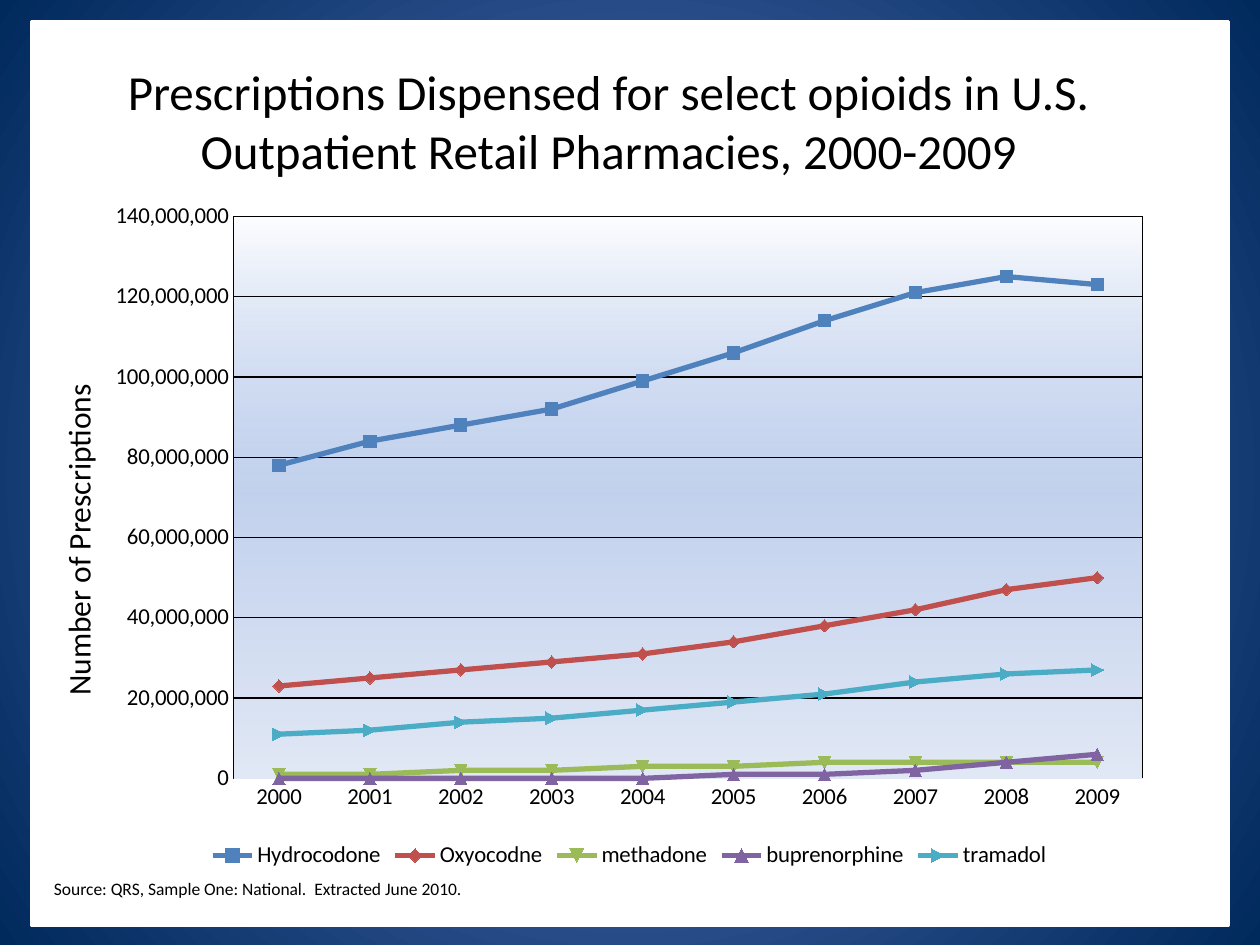
from lxml import etree
from pptx import Presentation
from pptx.chart.data import CategoryChartData
from pptx.dml.color import RGBColor
from pptx.enum.chart import XL_CHART_TYPE, XL_LEGEND_POSITION, XL_TICK_MARK
from pptx.enum.shapes import MSO_SHAPE
from pptx.enum.text import MSO_ANCHOR, PP_ALIGN
from pptx.oxml import parse_xml
from pptx.oxml.ns import nsdecls, qn
from pptx.util import Inches, Pt

LINE_MARKERS = XL_CHART_TYPE.LINE_MARKERS
BOTTOM = XL_LEGEND_POSITION.BOTTOM
NO_TICK = XL_TICK_MARK.NONE
RECTANGLE = MSO_SHAPE.RECTANGLE
MIDDLE, TOP = MSO_ANCHOR.MIDDLE, MSO_ANCHOR.TOP
CENTER, LEFT = PP_ALIGN.CENTER, PP_ALIGN.LEFT

FONT = "Calibri"
COLORS = {
    "glow": "5E7CC5", "navy": "00295C", "panel": "FFFFFF", "ink": "000000",
    "base": "E1E8F5", "Hydrocodone": "4F81BD", "Oxyocodne": "C0504D",
    "methadone": "9BBB59", "buprenorphine": "8064A2", "tramadol": "4BACC6",
}
MILLIONS = {
    "Hydrocodone": [78, 84, 88, 92, 99, 106, 114, 121, 125, 123],
    "Oxyocodne": [23, 25, 27, 29, 31, 34, 38, 42, 47, 50],
    "methadone": [1, 1, 2, 2, 3, 3, 4, 4, 4, 4],
    "buprenorphine": [0, 0, 0, 0, 0, 1, 1, 2, 4, 6],
    "tramadol": [11, 12, 14, 15, 17, 19, 21, 24, 26, 27],
}


def color(name):
    return RGBColor.from_string(COLORS[name])


def add_text(page, text, left, top, width, height, size=10, align=LEFT,
             anchor=TOP, wrap=True, rotation=0):
    box = page.shapes.add_textbox(Inches(left), Inches(top), Inches(width), Inches(height))
    box.rotation = rotation
    frame = box.text_frame
    frame.word_wrap = wrap
    frame.vertical_anchor = anchor
    para = frame.paragraphs[0]
    para.alignment = align
    span = para.add_run()
    span.text = text
    span.font.name = FONT
    span.font.size = Pt(size)
    span.font.color.rgb = color("ink")


deck = Presentation()
deck.slide_width, deck.slide_height = Inches(10), Inches(7.5)
page = deck.slides.add_slide(deck.slide_layouts[6])

# Background: radial gradient
fill = page.background.fill
fill.gradient()
for stop, name in zip(fill.gradient_stops, ("glow", "navy")):
    stop.color.rgb = color(name)
    stop.position = 0 if name == "glow" else 1
gradient = page.element.find(".//" + qn("a:gradFill"))
linear = gradient.find(qn("a:lin"))
radial = parse_xml(
    f'<a:path {nsdecls("a")} path="circle">'
    '<a:fillToRect l="50000" t="50000" r="50000" b="50000"/></a:path>')
gradient.replace(linear, radial)

# White panel
panel = page.shapes.add_shape(RECTANGLE, Inches(0.25), Inches(0.17), Inches(9.5), Inches(7.17))
panel.shadow.inherit = False
panel.fill.solid()
panel.fill.fore_color.rgb = color("panel")
panel.line.color.rgb = color("panel")
panel.line.width = Pt(2)

# Title
add_text(page, "Prescriptions Dispensed for select opioids in U.S. "
         "Outpatient Retail Pharmacies, 2000-2009",
         0.33, 0.33, 9, 1.25, size=28, align=CENTER, anchor=MIDDLE)

# Line chart
data = CategoryChartData(number_format="#,##0")
data.categories = [str(year) for year in range(2000, 2010)]
for name, values in MILLIONS.items():
    data.add_series(name, [value * 1_000_000 for value in values])
chart = page.shapes.add_chart(LINE_MARKERS, Inches(0.75), Inches(1.5),
                              Inches(8.49), Inches(5.44), data).chart
chart.has_title = False
chart.font.name = FONT
chart.font.size = Pt(10)
chart.font.color.rgb = color("ink")
chart.has_legend = True
chart.legend.position = BOTTOM
chart.legend.include_in_layout = False
chart.plots[0].vary_by_categories = False

for series in chart.plots[0].series:
    series.smooth = False
    series.format.line.width = Pt(3)
    series.format.line.color.rgb = color(series.name)
    series.marker.size = 7
    series.marker.format.fill.solid()
    series.marker.format.fill.fore_color.rgb = color(series.name)
    series.marker.format.line.color.rgb = color(series.name)

# Axes and legend text
years, counts = chart.category_axis, chart.value_axis
for axis in (years, counts):
    axis.major_tick_mark = axis.minor_tick_mark = NO_TICK
for part in (years.tick_labels, counts.tick_labels, chart.legend):
    part.font.size = Pt(13)
    part.font.name = FONT
    part.font.color.rgb = color("ink")
years.has_major_gridlines = False
years.format.line.color.rgb = color("base")
counts.minimum_scale, counts.maximum_scale = 0, 140_000_000
counts.major_unit = 20_000_000
counts.tick_labels.number_format = "#,##0"
counts.tick_labels.number_format_is_linked = False
counts.format.line.fill.background()
counts.major_gridlines.format.line.color.rgb = color("ink")
counts.major_gridlines.format.line.width = Pt(0.75)

# Plot area: inner position, gradient fill and border
plot_area = chart.element.find(".//" + qn("c:plotArea"))
for old in plot_area.findall(qn("c:layout")):
    plot_area.remove(old)
layout = parse_xml(
    f'<c:layout {nsdecls("c")}><c:manualLayout><c:layoutTarget val="inner"/>'
    '<c:xMode val="edge"/><c:yMode val="edge"/></c:manualLayout></c:layout>')
for tag, share in (("x", 0.13), ("y", 0.04), ("w", 0.85), ("h", 0.82)):
    etree.SubElement(layout[0], qn("c:" + tag)).set("val", str(share))
plot_area.insert(0, layout)
plot_area.append(parse_xml(
    f'<c:spPr {nsdecls("c", "a")}><a:gradFill><a:gsLst>'
    '<a:gs pos="0"><a:srgbClr val="9AB5E4"><a:alpha val="2000"/></a:srgbClr></a:gs>'
    '<a:gs pos="50000"><a:srgbClr val="C2D1ED"/></a:gs>'
    f'<a:gs pos="100000"><a:srgbClr val="{COLORS["base"]}"/></a:gs>'
    '</a:gsLst><a:lin ang="5400000" scaled="0"/></a:gradFill>'
    f'<a:ln w="9525"><a:solidFill><a:srgbClr val="{COLORS["ink"]}"/></a:solidFill></a:ln>'
    '</c:spPr>'))

# Axis caption and source note
add_text(page, "Number of Prescriptions", -0.73, 4.07, 2.7, 0.4,
         size=18, wrap=False, rotation=270)
add_text(page, "Source: QRS, Sample One: National.  Extracted June 2010.",
         0.33, 6.92, 8.58, 0.27)

deck.save("out.pptx")
